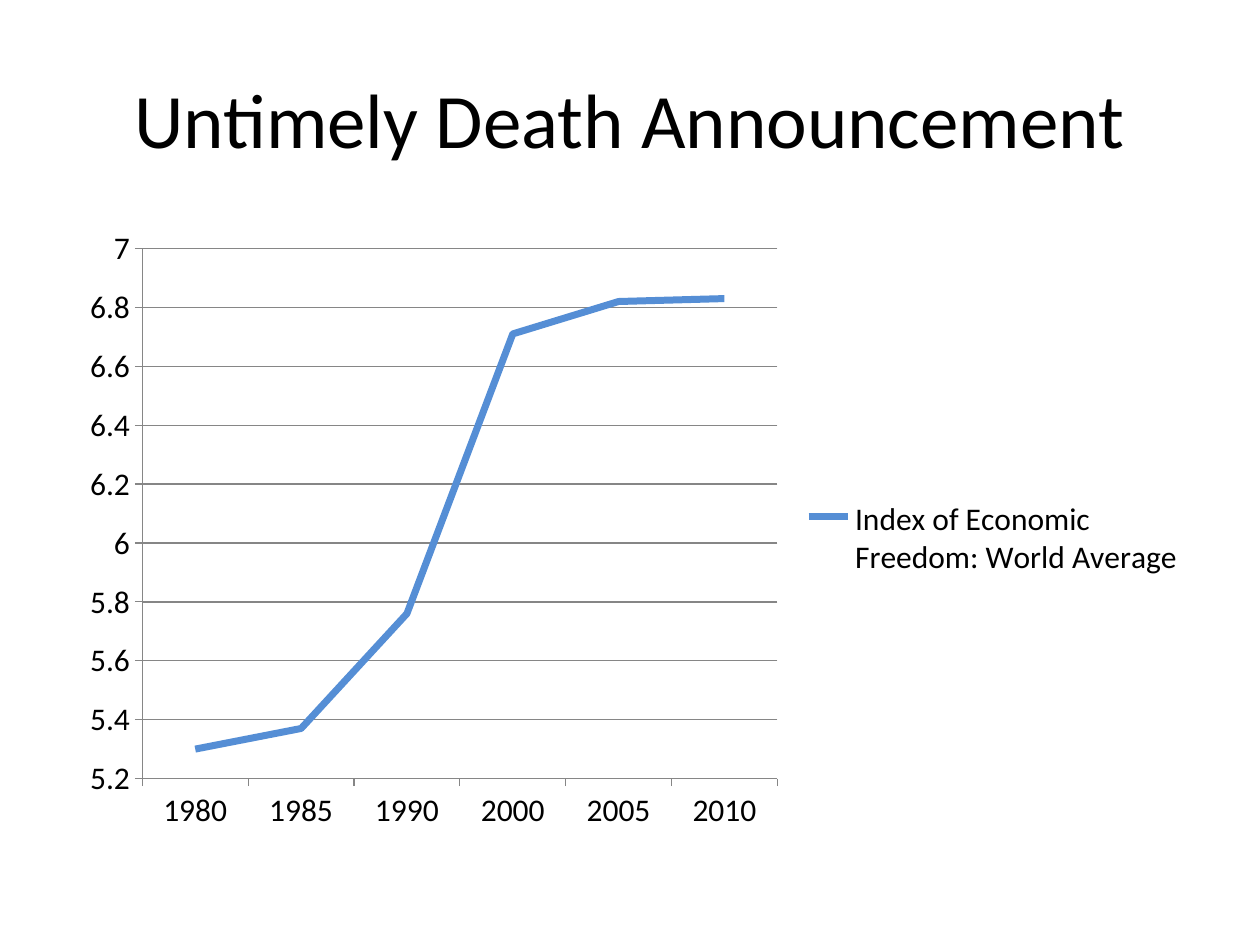
from dataclasses import dataclass

from lxml import etree
from pptx import Presentation
from pptx.chart.data import CategoryChartData
from pptx.dml.color import RGBColor
from pptx.enum.chart import XL_CHART_TYPE, XL_LEGEND_POSITION, XL_MARKER_STYLE, XL_TICK_MARK
from pptx.enum.text import MSO_ANCHOR, PP_ALIGN
from pptx.oxml.ns import qn
from pptx.util import Inches, Pt

LINE_CHART = XL_CHART_TYPE.LINE
LEGEND_RIGHT = XL_LEGEND_POSITION.RIGHT
NO_MARKER = XL_MARKER_STYLE.NONE
TICK_OUTSIDE = XL_TICK_MARK.OUTSIDE
TICK_NONE = XL_TICK_MARK.NONE
MIDDLE = MSO_ANCHOR.MIDDLE
CENTER = PP_ALIGN.CENTER


@dataclass(frozen=True)
class Theme:
    font: str = "Calibri"
    title_size: int = 44
    chart_size: int = 18
    text: RGBColor = RGBColor(0x00, 0x00, 0x00)
    grid: RGBColor = RGBColor(0x86, 0x86, 0x86)
    series: RGBColor = RGBColor(0x55, 0x8E, 0xD5)
    grid_width: float = 0.75
    series_width: float = 4


THEME = Theme()
WIDTH, HEIGHT = Inches(10), Inches(7.5)

# Left, top, width and height as shares of the slide
TITLE_AREA = (0.05, 0.04, 0.9, 0.17)
CHART_AREA = (0.05, 0.23, 0.9, 0.66)
# The same as shares of the chart
PLOT_AREA = (0.07, 0.05, 0.56, 0.85)
LEGEND_AREA = (0.65, 0.44, 0.34, 0.15)

YEARS = ("1980", "1985", "1990", "2000", "2005", "2010")
INDEX_NAME = "Index of Economic Freedom: World Average"
INDEX_VALUES = (5.3, 5.37, 5.76, 6.71, 6.82, 6.83)


def slide_area(shares):
    """Turn shares of the slide into lengths."""
    return [round(share * side) for share, side in zip(shares, (WIDTH, HEIGHT) * 2)]


def style_font(font, size):
    font.name = THEME.font
    font.size = Pt(size)
    font.color.rgb = THEME.text


def style_line(line, color, width):
    line.color.rgb = color
    line.width = Pt(width)


def add_title(page, text):
    box = page.shapes.add_textbox(*slide_area(TITLE_AREA))
    frame = box.text_frame
    frame.word_wrap = True
    frame.vertical_anchor = MIDDLE
    frame.text = text
    para = frame.paragraphs[0]
    para.alignment = CENTER
    style_font(para.runs[0].font, THEME.title_size)


def place_part(part, index, shares, inner=False):
    """Give a chart part a fixed layout, as its child at the given index."""
    for old in part.findall(qn("c:layout")):
        part.remove(old)
    layout = etree.Element(qn("c:layout"))
    manual = etree.SubElement(layout, qn("c:manualLayout"))
    settings = [("layoutTarget", "inner")] if inner else []
    settings += [("xMode", "edge"), ("yMode", "edge")]
    settings += zip("xywh", map(str, shares))
    for name, value in settings:
        etree.SubElement(manual, qn(f"c:{name}")).set("val", value)
    part.insert(index, layout)


def style_axis(axis):
    axis.major_tick_mark = TICK_OUTSIDE
    axis.minor_tick_mark = TICK_NONE
    style_line(axis.format.line, THEME.grid, THEME.grid_width)


def add_index_chart(page):
    data = CategoryChartData(number_format="General")
    data.categories = YEARS
    data.add_series(INDEX_NAME, INDEX_VALUES)
    chart = page.shapes.add_chart(LINE_CHART, *slide_area(CHART_AREA), data).chart
    style_font(chart.font, THEME.chart_size)
    chart.has_title = False

    chart.has_legend = True
    chart.legend.position = LEGEND_RIGHT
    chart.legend.include_in_layout = False

    style_axis(chart.category_axis)
    value_axis = chart.value_axis
    style_axis(value_axis)
    value_axis.minimum_scale, value_axis.maximum_scale = 5.2, 7
    value_axis.major_unit = 0.2
    value_axis.has_major_gridlines = True
    style_line(value_axis.major_gridlines.format.line, THEME.grid, THEME.grid_width)

    plot = chart.plots[0]
    plot.vary_by_categories = False
    series = plot.series[0]
    series.smooth = False
    series.marker.style = NO_MARKER
    style_line(series.format.line, THEME.series, THEME.series_width)

    chart_space = chart.element
    place_part(chart_space.find(".//" + qn("c:plotArea")), 0, PLOT_AREA, inner=True)
    place_part(chart_space.find(".//" + qn("c:legend")), 1, LEGEND_AREA)


def main():
    deck = Presentation()
    deck.slide_width, deck.slide_height = WIDTH, HEIGHT
    page = deck.slides.add_slide(deck.slide_layouts[6])
    add_title(page, "Untimely Death Announcement")
    add_index_chart(page)
    deck.save("out.pptx")


if __name__ == "__main__":
    main()
